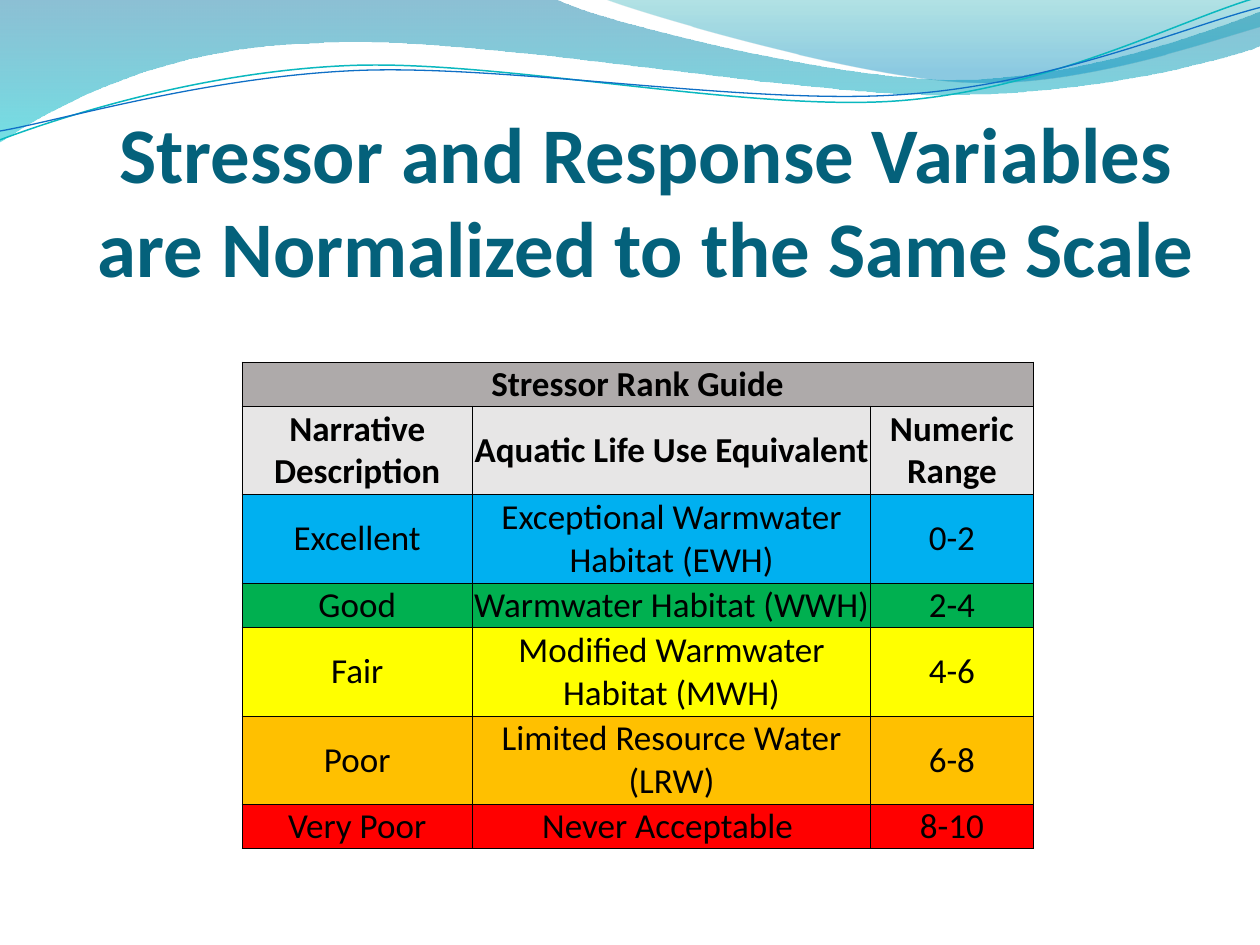
import dataclasses
import math

import lxml.etree
import pptx
import pptx.dml.color
import pptx.enum.text
import pptx.oxml.ns
import pptx.util

Inches = pptx.util.Inches
qn = pptx.oxml.ns.qn
ALIGN = pptx.enum.text.PP_ALIGN
ANCHOR = pptx.enum.text.MSO_ANCHOR


@dataclasses.dataclass(frozen=True)
class Theme:
    font: str = "Calibri"
    title: str = "04617B"
    ink: str = "000000"
    band: str = "AEAAAA"
    head: str = "E7E6E6"
    teal: str = "0AB8BF"
    blue: str = "0F6FC6"
    broad: tuple = ((0, "0074A1", 45), (1, "00C6CF", 55))
    small: tuple = ((0, "00A1A9", 30), (0.8, "008BBF", 45))
    large: int = 45
    body: int = 20
    rule: float = 0.5
    plain: str = "{2D5ABB26-0587-4C30-8999-92F81FD0307C}"


BROAD = [
    (0, 0), (4.4, -0.01),
    (4.76, 0.17, 6.64, 0.63, 7.58, 0.63), (8.53, 0.63, 9.58, 0.26, 10, 0.09),
    (10.01, 0.36),
    (9.83, 0.44, 8.7, 0.76, 7.46, 0.75), (6.22, 0.75, 3.82, 0.28, 2.57, 0.34),
    (1.29, 0.36, 0.46, 0.83, -0.01, 1.13), (0, 0),
]
SMALL = [
    (4.79, -0.01),
    (5.09, 0.11, 6.82, 0.62, 7.69, 0.65), (8.56, 0.69, 9.61, 0.32, 10, 0.21),
    (10, 0), (4.79, -0.01),
]
UPPER = [
    (0, 1.11), (0.48, 0.93, 1.58, 0.57, 2.77, 0.52),
    (3.95, 0.47, 5.93, 0.89, 7.13, 0.8), (8.33, 0.71, 9.38, 0.15, 9.98, -0.02),
]
LOWER = [
    (0, 1.04), (0.47, 0.96, 1.64, 0.61, 2.83, 0.56),
    (4.03, 0.51, 5.97, 0.84, 7.17, 0.75), (8.36, 0.67, 9.41, 0.21, 10, 0.06),
]
RANKS = [
    ("Excellent", "Exceptional Warmwater Habitat (EWH)", "0-2", "00B0F0"),
    ("Good", "Warmwater Habitat (WWH)", "2-4", "00B050"),
    ("Fair", "Modified Warmwater Habitat (MWH)", "4-6", "FFFF00"),
    ("Poor", "Limited Resource Water (LRW)", "6-8", "FFC000"),
    ("Very Poor", "Never Acceptable ", "8-10", "FF0000"),
]


def shade(text):
    return pptx.dml.color.RGBColor.from_string(text)


def write(frame, text, *, font, size, color, bold=False, align=ALIGN.CENTER):
    para = frame.paragraphs[0]
    para.alignment = align
    run = para.add_run()
    run.text = text
    run.font.name = font
    run.font.size = pptx.util.Pt(size)
    run.font.bold = bold
    run.font.color.rgb = shade(color)


def pairs(part):
    return list(zip(part[::2], part[1::2]))


def turn(parts, angle, pivot):
    cos, sin = math.cos(math.radians(angle)), math.sin(math.radians(angle))
    px, py = pivot
    return [tuple(value for x, y in pairs(part) for value in (
        px + (x - px) * cos - (y - py) * sin,
        py + (x - px) * sin + (y - py) * cos)) for part in parts]


def bend(shape, parts):
    lines = iter(list(shape._element.spPr.iter(qn("a:lnTo"))))
    for part in parts[1:]:
        first, *rest = [next(lines) for _ in pairs(part)]
        if not rest:
            continue
        owner = first.getparent()
        curve = lxml.etree.Element(qn("a:cubicBezTo"))
        owner.replace(first, curve)
        curve.append(first[0])
        for line in rest:
            curve.append(line[0])
            owner.remove(line)


class Deck:
    def __init__(self, theme):
        self.theme = theme
        self.show = pptx.Presentation()
        self.show.slide_width = Inches(10)
        self.show.slide_height = Inches(7.5)
        self.slide = self.show.slides.add_slide(self.show.slide_layouts[5])

    def outline(self, parts, close):
        spots = [(Inches(x), Inches(y)) for part in parts for x, y in pairs(part)]
        pen = self.slide.shapes.build_freeform(*spots[0])
        pen.add_line_segments(spots[1:], close=close)
        shape = pen.convert_to_shape()
        bend(shape, parts)
        shape.shadow.inherit = False
        return shape

    def wave(self, parts, stops):
        shape = self.outline(parts, True)
        shape.line.fill.background()
        shape.fill.gradient()
        shape.fill.gradient_angle = 270
        for stop, (place, color, _) in zip(shape.fill.gradient_stops, stops):
            stop.position = place
            stop.color.rgb = shade(color)
        tints = shape._element.spPr.iter(qn("a:srgbClr"))
        for tint, (_, _, alpha) in zip(tints, stops):
            lxml.etree.SubElement(tint, qn("a:alpha"), val=str(alpha * 1000))

    def curve(self, parts, color, width, pivot, tilt=2.7):
        shape = self.outline(turn(parts, tilt, pivot), False)
        shape.rotation = 360 - tilt
        shape.fill.background()
        shape.line.color.rgb = shade(color)
        shape.line.width = pptx.util.Pt(width)

    def title(self, text):
        look, shape = self.theme, self.slide.shapes.title
        self.slide.shapes._spTree.append(shape._element)
        shape.left, shape.top = Inches(0.5), Inches(1.08)
        shape.width, shape.height = Inches(9.25), Inches(1.25)
        frame = shape.text_frame
        frame.word_wrap = True
        frame.auto_size = pptx.enum.text.MSO_AUTO_SIZE.NONE
        frame.vertical_anchor = ANCHOR.BOTTOM
        frame.margin_left = frame.margin_right = frame.margin_bottom = 0
        frame.margin_top = Inches(0.05)
        write(frame, text, font=look.font, size=look.large, color=look.title,
              bold=True)

    def edge(self, cell):
        for side in "LRTB":
            line = lxml.etree.SubElement(
                cell._tc.get_or_add_tcPr(), qn("a:ln" + side),
                w=str(pptx.util.Pt(self.theme.rule)))
            fill = lxml.etree.SubElement(line, qn("a:solidFill"))
            lxml.etree.SubElement(fill, qn("a:srgbClr"), val=self.theme.ink)

    def table(self, rows, left, top, widths, heights, first):
        look = self.theme
        grid = self.slide.shapes.add_table(
            len(heights), len(widths), Inches(left), Inches(top),
            Inches(sum(widths)), Inches(sum(heights))).table
        grid.first_row = grid.horz_banding = False
        grid._tbl.tblPr.find(qn("a:tableStyleId")).text = look.plain
        for col, width in zip(grid.columns, widths):
            col.width = Inches(width)
        for row, height in zip(grid.rows, heights):
            row.height = Inches(height)
        for cell in grid.iter_cells():
            cell.margin_left = cell.margin_right = 0
            cell.margin_top = cell.margin_bottom = 0
        for at, (*texts, color) in enumerate(rows):
            for col, text in enumerate(texts):
                cell = grid.cell(first + at, col)
                self.edge(cell)
                cell.fill.solid()
                cell.fill.fore_color.rgb = shade(color)
                cell.vertical_anchor = ANCHOR.MIDDLE
                if text:
                    write(cell.text_frame, text, font=look.font, size=look.body,
                          color=look.ink, bold=at < 2)
        grid.cell(first, 0).merge(grid.cell(first, len(rows[0]) - 2))


def main():
    look = Theme()
    deck = Deck(look)
    deck.wave(BROAD, look.broad)
    deck.wave(SMALL, look.small)
    deck.curve(UPPER, look.teal, 0.85, (4.99, 0.58))
    deck.curve(LOWER, look.blue, 0.75, (5, 0.59))
    deck.title("Stressor and Response Variables are Normalized to the Same Scale")
    rows = [
        ("Stressor Rank Guide", "", "", look.band),
        ("Narrative Description", "Aquatic Life Use Equivalent", "Numeric Range",
         look.head),
        *RANKS,
    ]
    lines = (1, 1, 1, 2, 2, 1, 2, 2, 1, 1)
    heights = [4.92 * line / sum(lines) for line in lines]
    deck.table(rows, 1.92, 2.17, (1.83, 3.16, 1.29, 0.81), heights, first=2)
    deck.show.save("out.pptx")


if __name__ == "__main__":
    main()
